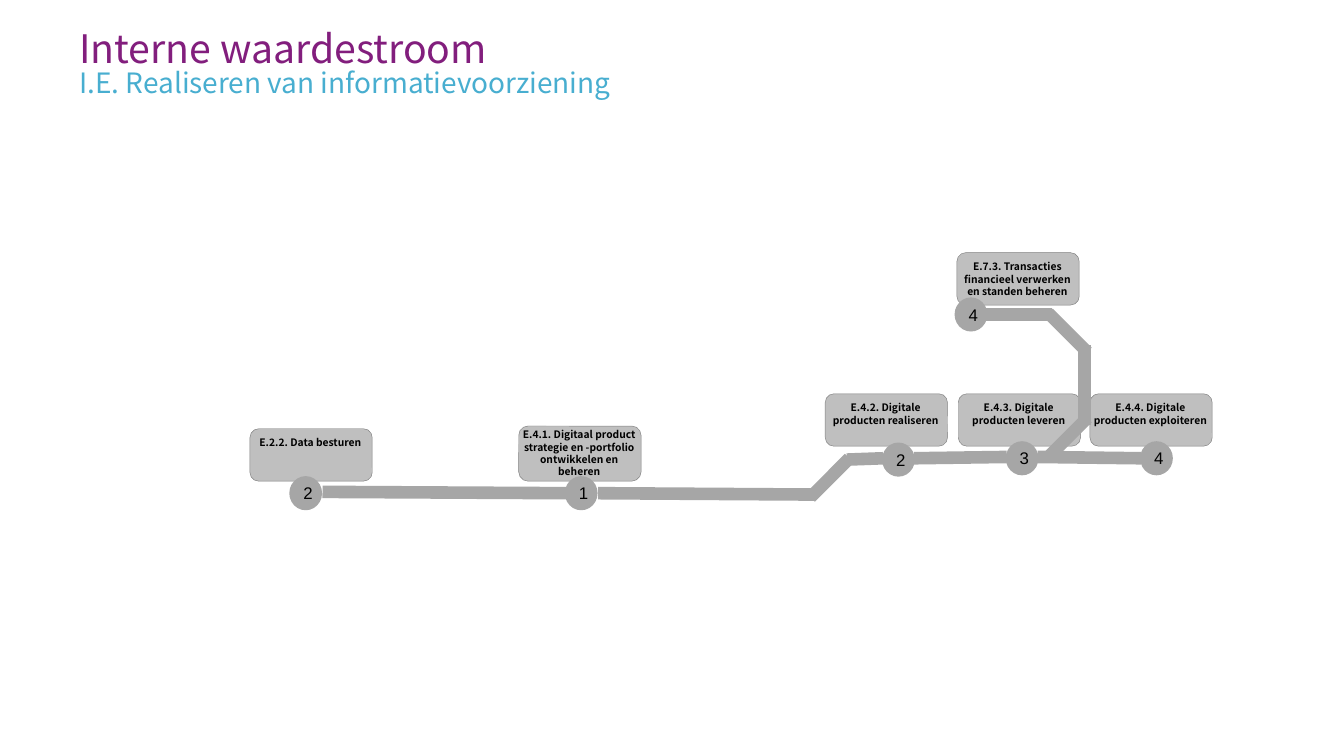
from lxml.etree import SubElement
from pptx import Presentation
from pptx.dml.color import RGBColor
from pptx.enum.shapes import MSO_CONNECTOR, MSO_SHAPE
from pptx.enum.text import MSO_ANCHOR, PP_ALIGN
from pptx.oxml.ns import qn
from pptx.util import Inches, Pt

SANS = "Noto Sans CJK TC"
TRACK_COLOR = "A6A6A6"
BOX_WIDTH, BOX_HEIGHT = 0.91, 0.39
STATION_WIDTH, STATION_HEIGHT = 0.23, 0.24

HEADINGS = [
    ("Interne waardestroom", (0.59, 0.14, 7.28, 0.39), 21, "821E7D", Pt(28)),
    ("I.E. Realiseren van informatievoorziening", (0.59, 0.44, 7.55, 0.22), 15, "48AED0", 1.2),
]
PORTFOLIO_PROCESS = "E.4.1. Digitaal product strategie en -portfolio ontwikkelen en beheren"
PROCESSES = [
    ("E.7.3. Transacties financieel verwerken en standen beheren", 7.12, 1.88),
    (PORTFOLIO_PROCESS, 3.86, 3.17, 0.41, 0),
    ("E.2.2. Data besturen", 1.86, 3.19),
    ("E.4.2. Digitale producten realiseren", 6.14, 2.93),
    ("E.4.3. Digitale producten leveren", 7.13, 2.93),
    ("E.4.4. Digitale producten exploiteren", 8.11, 2.93),
]
STATIONS = [
    ("1", 4.21, 3.55),
    ("3", 7.49, 3.29),
    ("2", 6.57, 3.3),
    ("4", 7.11, 2.22),
    ("2", 2.16, 3.55),
    ("4", 8.49, 3.29),
]
TRACKS = [
    (8.49, 3.41, 7.72, 3.4),
    (7.49, 3.4, 6.8, 3.41),
    (4.21, 3.67, 2.4, 3.66),
    (6.07, 3.68, 4.45, 3.67),
    (6.03, 3.7, 6.32, 3.41),
    (6.57, 3.41, 6.3, 3.42),
    (7.8, 3.4, 8.09, 3.11),
    (7.8, 2.33, 8.09, 2.62),
    (7.83, 2.34, 7.34, 2.34),
    (8.07, 3.16, 8.07, 2.57),
]


def color(hex_string):
    """Return the colour for a hex string."""
    return RGBColor.from_string(hex_string)


def set_insets(frame, left, top, right, bottom):
    """Set the four text margins in inches."""
    insets = {"left": left, "top": top, "right": right, "bottom": bottom}
    for side, length in insets.items():
        setattr(frame, f"margin_{side}", Inches(length))


def write_text(frame, text, font_color="000000", **font_format):
    """Fill the first paragraph with one formatted run and return the paragraph."""
    frame.word_wrap = True
    paragraph = frame.paragraphs[0]
    run = paragraph.add_run()
    run.text = text
    for name, value in font_format.items():
        setattr(run.font, name, value)
    run.font.color.rgb = color(font_color)
    return paragraph


def add_heading(slide, text, position, size, font_color, line_spacing):
    """Add a heading line without margins."""
    frame = slide.shapes.add_textbox(*map(Inches, position)).text_frame
    set_insets(frame, 0, 0, 0, 0)
    paragraph = write_text(frame, text, font_color, name=SANS, size=Pt(size))
    paragraph.line_spacing = line_spacing


def add_filled_shape(slide, kind, position, fill, line, line_width):
    """Add a flat preset shape with a fill and an outline."""
    shape = slide.shapes.add_shape(kind, *map(Inches, position))
    shape.shadow.inherit = False
    shape.fill.solid()
    shape.fill.fore_color.rgb = color(fill)
    shape.line.color.rgb = color(line)
    shape.line.width = Pt(line_width)
    return shape


def add_process(slide, text, left, top, height=BOX_HEIGHT, top_inset=0.04):
    """Add a rounded process box with a centred bold label."""
    shape = add_filled_shape(slide, MSO_SHAPE.ROUNDED_RECTANGLE,
                             (left, top, BOX_WIDTH, height), "BFBFBF", "808080", 0.25)
    frame = shape.text_frame
    set_insets(frame, 0, top_inset, 0.01, 0.04)
    frame.vertical_anchor = MSO_ANCHOR.TOP
    paragraph = write_text(frame, text, name=SANS, size=Pt(5.5), bold=True)
    paragraph.alignment = PP_ALIGN.CENTER


def add_station(slide, number, left, top):
    """Add a numbered station circle."""
    shape = add_filled_shape(slide, MSO_SHAPE.OVAL,
                             (left, top, STATION_WIDTH, STATION_HEIGHT),
                             TRACK_COLOR, TRACK_COLOR, 1)
    shape.text_frame.vertical_anchor = MSO_ANCHOR.MIDDLE
    paragraph = write_text(shape.text_frame, number, name="Arial", size=Pt(9))
    paragraph.alignment = PP_ALIGN.CENTER


def add_track(slide, *ends):
    """Add a thick track segment between two points."""
    connector = slide.shapes.add_connector(MSO_CONNECTOR.STRAIGHT, *map(Inches, ends))
    connector.line.color.rgb = color(TRACK_COLOR)
    connector.line.width = Pt(6.75)
    SubElement(connector._element.spPr, qn("a:effectLst"))


def main():
    """Build the value stream slide."""
    presentation = Presentation()
    presentation.slide_width = Inches(10)
    presentation.slide_height = Inches(10 * 9 / 16)
    slide = presentation.slides.add_slide(presentation.slide_layouts[6])
    for heading in HEADINGS:
        add_heading(slide, *heading)
    for process in PROCESSES:
        add_process(slide, *process)
    for station in STATIONS:
        add_station(slide, *station)
    for track in TRACKS:
        add_track(slide, *track)
    presentation.save("out.pptx")


if __name__ == "__main__":
    main()
